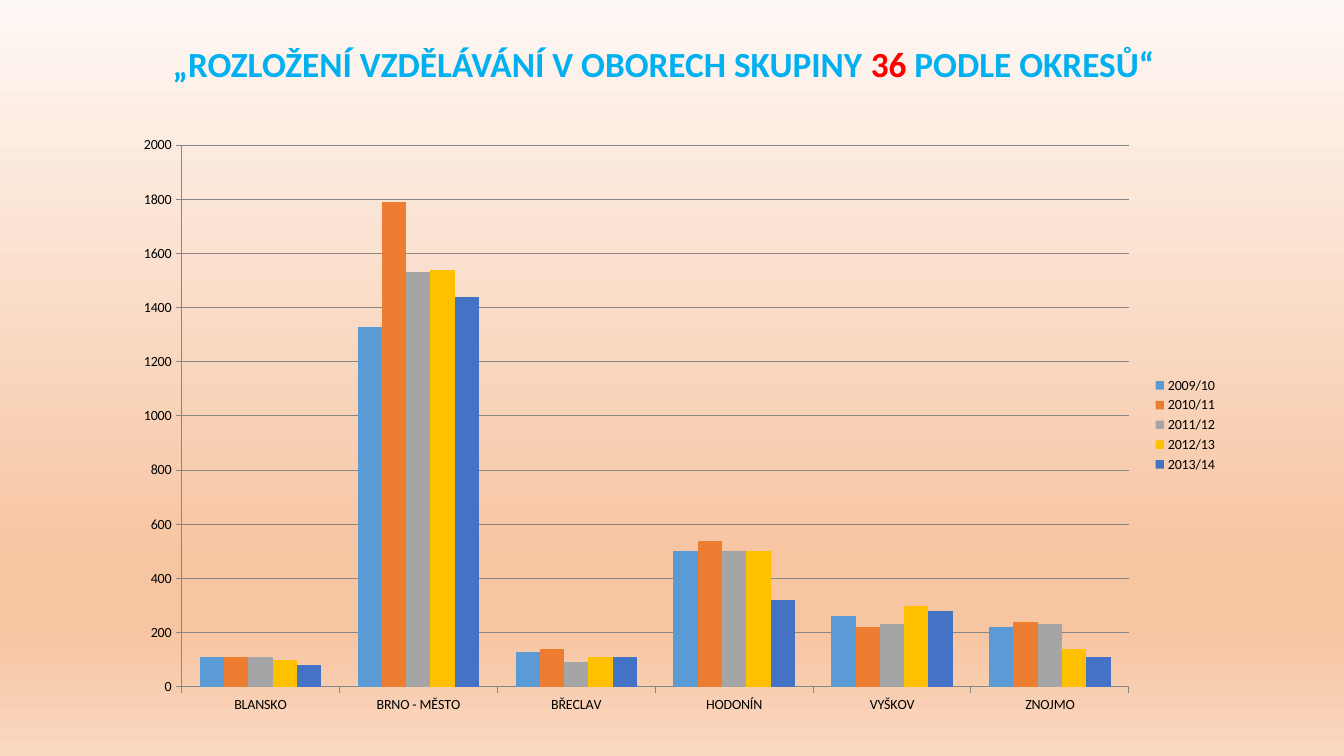
from copy import deepcopy

from pptx import Presentation
from pptx.chart.data import CategoryChartData
from pptx.dml.color import RGBColor
from pptx.enum.chart import XL_CHART_TYPE, XL_LEGEND_POSITION, XL_TICK_MARK
from pptx.enum.text import MSO_ANCHOR, MSO_AUTO_SIZE, PP_ALIGN
from pptx.util import Pt

COLORS = {
    "title": "00B0F0",
    "highlight": "FF0000",
    "text": "000000",
    "axis": "868686",
}
BACKGROUND_STOPS = [(0, "FEF8F5"), (0.74, "F7C5A2"), (0.83, "F7C5A2"), (1, "FAD8C1")]
TITLE_RUNS = [
    ("„ROZLOŽENÍ VZDĚLÁVÁNÍ V OBORECH SKUPINY ", "title"),
    ("36", "highlight"),
    (" PODLE OKRESŮ“", "title"),
]
DISTRICTS = ["BLANSKO", "BRNO - MĚSTO", "BŘECLAV", "HODONÍN", "VYŠKOV", "ZNOJMO"]
SCHOOL_YEARS = [
    ("2009/10", "5B9BD5", [110, 1330, 130, 500, 260, 220]),
    ("2010/11", "ED7D31", [110, 1790, 140, 540, 220, 240]),
    ("2011/12", "A5A5A5", [110, 1530, 90, 500, 230, 230]),
    ("2012/13", "FFC000", [100, 1540, 110, 500, 300, 140]),
    ("2013/14", "4472C4", [80, 1440, 110, 320, 280, 110]),
]


class SlideBuilder:
    """Holds the shared style and the slide being filled."""

    font_name = "Calibri"

    def __init__(self, slide):
        self.slide = slide

    def style_font(self, font, size, color=None, bold=False):
        font.name = self.font_name
        font.size = Pt(size)
        font.bold = bold
        if color:
            font.color.rgb = RGBColor.from_string(COLORS[color])

    def background(self, stops):
        """Fill the background with a gradient running from top to bottom."""
        fill = self.slide.background.fill
        fill.gradient()
        fill.gradient_angle = 270
        stop_list = self.slide.element.xpath(".//p:bg//a:gsLst")[0]
        while len(stop_list) < len(stops):
            stop_list.append(deepcopy(stop_list[0]))
        for stop, (position, color) in zip(fill.gradient_stops, stops):
            stop.position = position
            stop.color.rgb = RGBColor.from_string(color)

    def title(self, runs, left, top, width, height):
        shape = self.slide.shapes.title
        shape.left, shape.top = Pt(left), Pt(top)
        shape.width, shape.height = Pt(width), Pt(height)
        frame = shape.text_frame
        frame.word_wrap = True
        frame.auto_size = MSO_AUTO_SIZE.NONE
        frame.vertical_anchor = MSO_ANCHOR.MIDDLE
        paragraph = frame.paragraphs[0]
        paragraph.alignment = PP_ALIGN.CENTER
        paragraph.line_spacing = 0.9
        self.style_font(paragraph.font, 25.2, bold=True)
        for text, color in runs:
            run = paragraph.add_run()
            run.text = text
            run.font.color.rgb = RGBColor.from_string(COLORS[color])

    def column_chart(self, categories, series_rows, left, top, width, height):
        data = CategoryChartData()
        data.categories = categories
        for name, _, values in series_rows:
            data.add_series(name, values)
        chart = self.slide.shapes.add_chart(
            XL_CHART_TYPE.COLUMN_CLUSTERED, Pt(left), Pt(top), Pt(width), Pt(height), data
        ).chart
        self.style_font(chart.font, 10, "text")
        chart.has_title = False
        chart.has_legend = True
        chart.legend.position = XL_LEGEND_POSITION.RIGHT
        chart.legend.include_in_layout = False

        plot = chart.plots[0]
        plot.gap_width = 150
        plot.overlap = 0
        plot.vary_by_categories = False
        for series, (_, color, _) in zip(plot.series, series_rows):
            series.format.fill.solid()
            series.format.fill.fore_color.rgb = RGBColor.from_string(color)

        value_axis = chart.value_axis
        value_axis.minimum_scale, value_axis.maximum_scale = 0, 2000
        value_axis.major_unit = 200
        value_axis.has_major_gridlines = True
        for axis in (chart.category_axis, value_axis):
            axis.major_tick_mark = XL_TICK_MARK.OUTSIDE
            axis.minor_tick_mark = XL_TICK_MARK.NONE
        for lines in (chart.category_axis, value_axis, value_axis.major_gridlines):
            lines.format.line.color.rgb = RGBColor.from_string(COLORS["axis"])
            lines.format.line.width = Pt(0.75)


def main():
    presentation = Presentation()
    presentation.slide_width, presentation.slide_height = Pt(960), Pt(540)
    title_only = presentation.slide_layouts[5]
    builder = SlideBuilder(presentation.slides.add_slide(title_only))
    builder.background(BACKGROUND_STOPS)
    builder.title(TITLE_RUNS, 98, 16.5, 752, 61)
    builder.column_chart(DISTRICTS, SCHOOL_YEARS, 87, 89.5, 790, 428)
    presentation.save("out.pptx")


if __name__ == "__main__":
    main()
